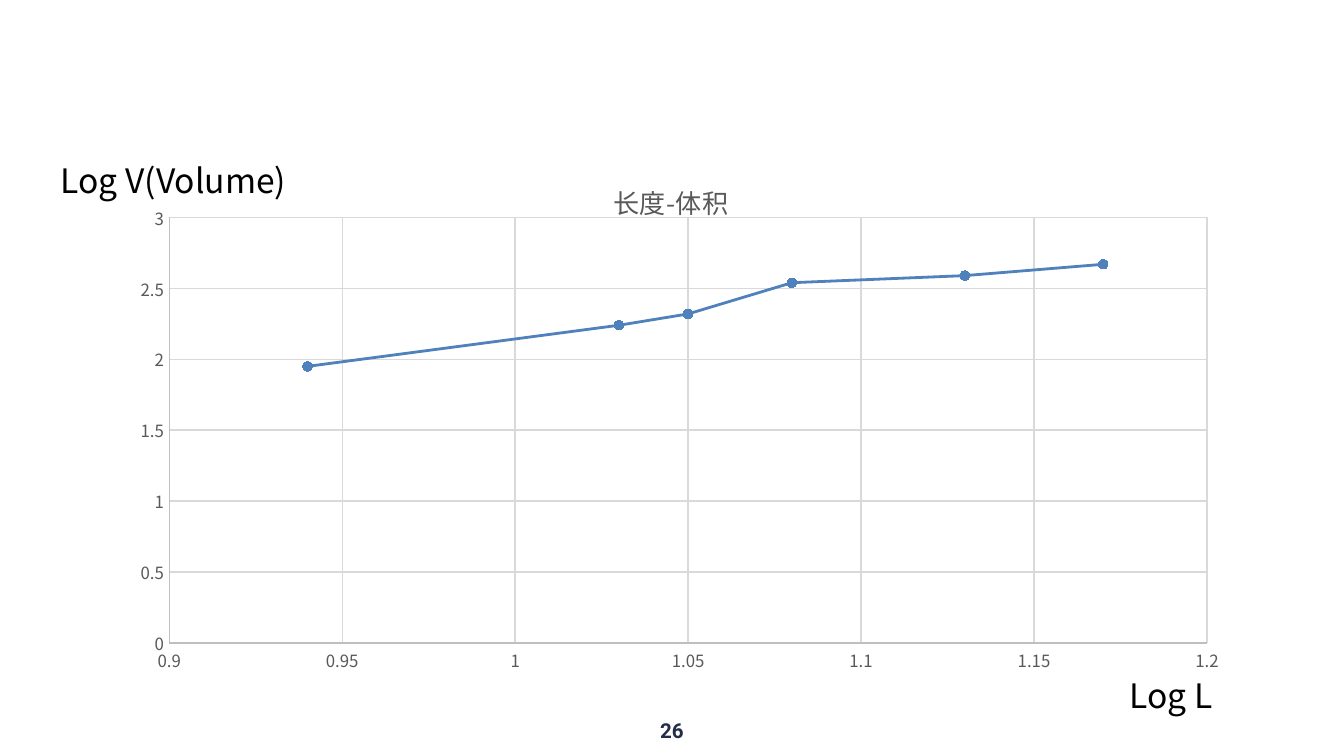
from lxml import etree
from pptx import Presentation
from pptx.chart.data import XyChartData
from pptx.dml.color import RGBColor
from pptx.enum.chart import XL_CHART_TYPE as CT, XL_MARKER_STYLE as MS, XL_TICK_MARK as TM
from pptx.enum.text import MSO_ANCHOR, MSO_AUTO_SIZE as FIT, PP_ALIGN as AL
from pptx.oxml.ns import qn
from pptx.util import Pt

BLACK = RGBColor(0x00, 0x00, 0x00)
NAVY = RGBColor(0x22, 0x2D, 0x47)
GRAY = RGBColor(0x59, 0x59, 0x59)
AXIS = RGBColor(0xBF, 0xBF, 0xBF)
GRID = RGBColor(0xD9, 0xD9, 0xD9)
BLUE = RGBColor(0x4F, 0x81, 0xBD)
SANS = "Noto Sans CJK KR"

TITLE = "长度-体积"
POINTS = [(0.94, 1.95), (1.03, 2.24), (1.05, 2.32),
          (1.08, 2.54), (1.13, 2.59), (1.17, 2.67)]


class Deck:
    def __init__(self, slide):
        self.s = slide

    def font(self, font, size, color, name=SANS, bold=False):
        font.name, font.size, font.bold = name, Pt(size), bold
        font.color.rgb = color

    def line(self, line, color, width):
        line.color.rgb = color
        line.width = Pt(width)

    def text(self, box, text, size, color, name=SANS, bold=False, align=AL.LEFT, wrap=False):
        sp = self.s.shapes.add_textbox(*map(Pt, box))
        tf = sp.text_frame
        tf.text = text
        tf.word_wrap = wrap
        tf.auto_size = FIT.NONE if wrap else FIT.SHAPE_TO_FIT_TEXT
        tf.vertical_anchor = MSO_ANCHOR.MIDDLE if wrap else MSO_ANCHOR.TOP
        p = tf.paragraphs[0]
        p.alignment = align
        self.font(p.runs[0].font, size, color, name, bold)

    def axis(self, axis, low, high, step):
        axis.minimum_scale, axis.maximum_scale, axis.major_unit = low, high, step
        axis.major_tick_mark = axis.minor_tick_mark = TM.NONE
        axis.has_major_gridlines = True
        self.line(axis.major_gridlines.format.line, GRID, 0.75)
        self.line(axis.format.line, AXIS, 0.75)
        self.font(axis.tick_labels.font, 9, GRAY)

    def plot_layout(self, chart, **frame):
        area = chart._chartSpace.chart.plotArea
        for old in area.findall(qn("c:layout")):
            area.remove(old)
        layout = etree.Element(qn("c:layout"))
        manual = etree.SubElement(layout, qn("c:manualLayout"))
        values = {"layoutTarget": "inner", "xMode": "edge", "yMode": "edge", **frame}
        for tag, value in values.items():
            etree.SubElement(manual, qn(f"c:{tag}")).set("val", str(value))
        area.insert(0, layout)

    def scatter(self, box, title, points):
        data = XyChartData()
        series = data.add_series(title)
        for x, y in points:
            series.add_data_point(x, y)
        chart = self.s.shapes.add_chart(CT.XY_SCATTER_SMOOTH, *map(Pt, box), data).chart
        self.font(chart.font, 10, BLACK)
        chart.has_legend = False

        # Chart title
        chart.has_title = True
        tf = chart.chart_title.text_frame
        tf.text = title
        r = tf.paragraphs[0].runs[0]
        self.font(r.font, 14, GRAY)
        etree.SubElement(r.font._element, qn("a:ea")).set("typeface", SANS)
        chart.chart_title.include_in_layout = False

        # Axes and plot area
        self.axis(chart.category_axis, 0.9, 1.2, 0.05)
        self.axis(chart.value_axis, 0, 3, 0.5)
        self.plot_layout(chart, x=0.06, y=0.11, w=0.91, h=0.77)

        # Curve and markers
        plot = chart.plots[0]
        plot.vary_by_categories = False
        curve = plot.series[0]
        curve.smooth = True
        self.line(curve.format.line, BLUE, 1.5)
        marker = curve.marker
        marker.style, marker.size = MS.CIRCLE, 5
        marker.format.fill.solid()
        marker.format.fill.fore_color.rgb = BLUE
        self.line(marker.format.line, BLUE, 0.75)


prs = Presentation()
prs.slide_width, prs.slide_height = Pt(720), Pt(405)
deck = Deck(prs.slides.add_slide(prs.slide_layouts[6]))

# Page number
deck.text((276, 381, 168, 20), "26", 11, NAVY, "Roboto", True, AL.CENTER, wrap=True)

# Length and volume chart
deck.scatter((54, 84, 611, 296), TITLE, POINTS)

# Axis names
deck.text((25.5, 82, 136, 29), "Log V(Volume)", 18, BLACK)
deck.text((598, 358, 60.5, 29), "Log L", 18, BLACK)

prs.save("out.pptx")
